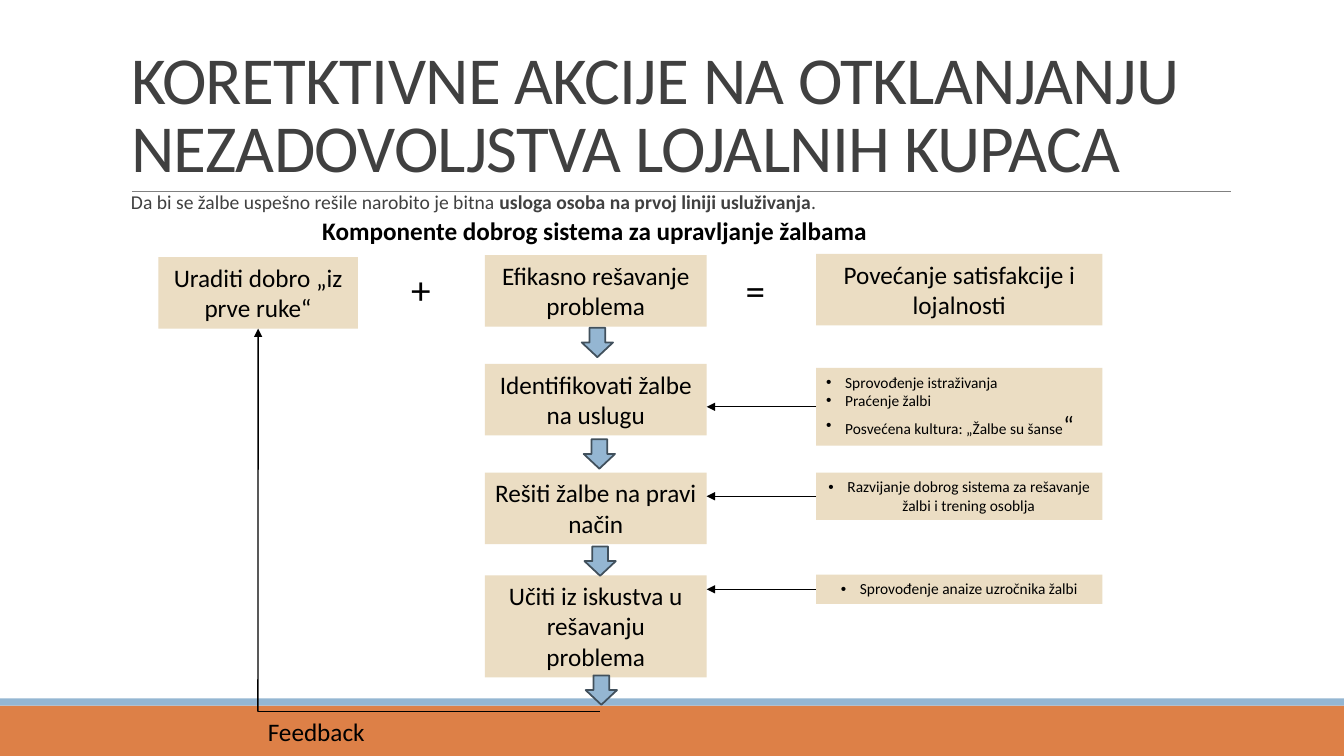
from lxml import etree
from pptx import Presentation
from pptx.dml.color import RGBColor
from pptx.enum import shapes as kinds, text as styles
from pptx.oxml.ns import qn
from pptx.util import Cm, Pt

ORANGE = RGBColor(0xDD, 0x80, 0x47)
BLUE = RGBColor(0x94, 0xB6, 0xD2)
DARK_BLUE = RGBColor(0x41, 0x50, 0x5C)
SAND = RGBColor(0xEB, 0xDD, 0xC3)
GREY = RGBColor(0x80, 0x80, 0x80)
DARK_GREY = RGBColor(0x40, 0x40, 0x40)
BLACK = RGBColor(0, 0, 0)
LEFT, CENTER = styles.PP_ALIGN.LEFT, styles.PP_ALIGN.CENTER

# Text is a list of paragraphs, each a list of (words, run format). Lengths are in cm.
TITLE = [[("KORETKTIVNE AKCIJE NA OTKLANJANJU NEZADOVOLJSTVA LOJALNIH KUPACA", {})]]
INTRO = [[("Da bi se žalbe uspešno rešile narobito je bitna ", {}),
          ("usloga osoba na prvoj liniji usluživanja", {"bold": True}),
          (".", {})]]
WIDTH, HEIGHT = 33.87, 19.05
STEP_LEFT, STEP_WIDTH = 12.22, 5.59
RIGHT_LEFT, RIGHT_WIDTH = 20.57, 7.21
BOX_HEIGHT = 1.8
BOXES = [  # words, left, top, width, height
    ("Uraditi dobro „iz prve ruke“", 3.99, 6.48, 5.03, BOX_HEIGHT),
    ("Efikasno rešavanje problema", STEP_LEFT, 6.43, STEP_WIDTH, BOX_HEIGHT),
    ("Povećanje satisfakcije i lojalnosti", RIGHT_LEFT, 6.4, RIGHT_WIDTH, BOX_HEIGHT),
    ("Identifikovati žalbe na uslugu", STEP_LEFT, 9.17, STEP_WIDTH, BOX_HEIGHT),
    ("Rešiti žalbe na pravi način", STEP_LEFT, 11.91, STEP_WIDTH, BOX_HEIGHT),
    ("Učiti iz iskustva u rešavanju problema", STEP_LEFT, 14.5, STEP_WIDTH, 2.57),
]
NOTES = [  # paragraphs, top, height, alignment
    ([[("Sprovođenje istraživanja", {})],
      [("Praćenje žalbi", {})],
      [("Posvećena kultura: „Žalbe su šanse", {}), ("“", {"size": 18})]], 9.27, 1.96, LEFT),
    ([[("Razvijanje dobrog sistema za rešavanje žalbi i trening osoblja", {})]],
     11.91, 1.19, CENTER),
    ([[("Sprovođenje anaize uzročnika žalbi", {})]], 14.48, 0.74, CENTER),
]
DOWN_ARROWS = [(14.66, 8.26), (14.71, 11.07), (14.73, 13.77), (14.76, 17.02)]
LABELS = [  # words, left, top, width, height, format
    ("+", 10.11, 6.55, 1.27, 1.45, {"size": 28}),
    ("=", 18.54, 6.58, 1.27, 1.45, {"size": 28}),
    ("Feedback", 6.5, 17.93, 2.95, 1.02, {}),
    ("Komponente dobrog sistema za upravljanje žalbama", 7.87, 5.31, 14.25, 1.02,
     {"bold": True}),
]
FEEDBACK_X, FEEDBACK_Y, FEEDBACK_END = 6.5, 17.93, 15.11


def write(shape, paragraphs, size=18, color=BLACK, bold=False, align=LEFT, anchor="TOP",
          bullet=None, margin=0, hanging=0, line=None, before=0, after=0, tracking=None,
          fit="SHAPE_TO_FIT_TEXT"):
    frame = shape.text_frame
    frame.word_wrap = True
    frame.auto_size = styles.MSO_AUTO_SIZE[fit]
    frame.vertical_anchor = styles.MSO_ANCHOR[anchor]
    for index, runs in enumerate(paragraphs):
        paragraph = frame.add_paragraph() if index else frame.paragraphs[0]
        paragraph.alignment = align
        paragraph.space_before, paragraph.space_after = Pt(before), Pt(after)
        if line:
            paragraph.line_spacing = line
        properties = paragraph._p.get_or_add_pPr()
        properties.set("marL", str(Cm(margin)))
        properties.set("indent", str(-Cm(hanging)))
        if bullet:
            etree.SubElement(properties, qn("a:buFont"), typeface="Arial")
            etree.SubElement(properties, qn("a:buChar"), char=bullet)
        else:
            etree.SubElement(properties, qn("a:buNone"))
        for words, changes in runs:
            run = paragraph.add_run()
            run.text = words
            run.font.name = "Calibri"
            run.font.size = Pt(changes.get("size", size))
            run.font.bold = changes.get("bold", bold)
            run.font.color.rgb = color
            if tracking:
                run._r.get_or_add_rPr().set("spc", str(tracking))


def place(shape, left, top, width, height):
    shape.left, shape.top = Cm(left), Cm(top)
    shape.width, shape.height = Cm(width), Cm(height)


def add_filled(slide, left, top, width, height, fill, kind="RECTANGLE", outline=None):
    shape = slide.shapes.add_shape(kinds.MSO_SHAPE[kind], Cm(left), Cm(top),
                                   Cm(width), Cm(height))
    shape.shadow.inherit = False
    shape.fill.solid()
    shape.fill.fore_color.rgb = fill
    if outline:
        shape.line.color.rgb = outline
        shape.line.width = Pt(1.25)
    else:
        shape.line.fill.background()
    return shape


def add_line(slide, start, end, color=BLACK, width=1, arrow=False):
    line = slide.shapes.add_connector(kinds.MSO_CONNECTOR.STRAIGHT,
                                      *(Cm(value) for value in start + end))
    line.line.color.rgb = color
    line.line.width = Pt(width)
    if arrow:
        etree.SubElement(line.line._get_or_add_ln(), qn("a:tailEnd"), type="triangle")
    etree.SubElement(line._element.spPr, qn("a:effectLst"))
    return line


def main():
    presentation = Presentation()
    presentation.slide_width, presentation.slide_height = Cm(WIDTH), Cm(HEIGHT)
    slide = presentation.slides.add_slide(presentation.slide_layouts[1])

    add_filled(slide, 0, 17.78, WIDTH, 1.27, ORANGE)
    add_filled(slide, 0, 17.6, WIDTH, 0.18, BLUE)
    add_line(slide, (3.33, 4.83), (31.01, 4.83), GREY, 0.5)

    title, intro = slide.placeholders
    place(title, 3.05, 0.79, 27.94, 4.04)
    write(title, TITLE, size=48, color=DARK_GREY, anchor="BOTTOM", line=0.85,
          tracking=-50, fit="NONE")
    place(intro, 3.05, 4.83, 27.94, 0.76)
    intro.text_frame.margin_left = intro.text_frame.margin_right = 0
    write(intro, INTRO, size=14, color=DARK_GREY, bullet=" ", margin=0.25, hanging=0.25,
          line=0.7, before=12, after=2, fit="NONE")

    boxes = []
    for words, *area in BOXES:
        box = add_filled(slide, *area, SAND)
        write(box, [[(words, {})]], align=CENTER)
        boxes.append(box)

    for paragraphs, top, height, align in NOTES:
        note = add_filled(slide, RIGHT_LEFT, top, RIGHT_WIDTH, height, SAND)
        write(note, paragraphs, size=11, align=align, bullet="•", margin=0.48, hanging=0.48)
        middle = top + height / 2
        arrow = add_line(slide, (RIGHT_LEFT, middle), (STEP_LEFT + STEP_WIDTH, middle),
                         arrow=True)
        arrow.begin_connect(note, 1)

    for left, top in DOWN_ARROWS:
        add_filled(slide, left, top, 0.79, 0.74, BLUE, "DOWN_ARROW", DARK_BLUE)

    first_box = boxes[0]
    feedback = add_line(slide, (FEEDBACK_X, FEEDBACK_Y), (FEEDBACK_X, 8.28), arrow=True)
    feedback.end_connect(first_box, 2)
    add_line(slide, (FEEDBACK_X, FEEDBACK_Y), (FEEDBACK_END, FEEDBACK_Y))

    for words, left, top, width, height, look in LABELS:
        label = slide.shapes.add_textbox(Cm(left), Cm(top), Cm(width), Cm(height))
        write(label, [[(words, {})]], **look)

    presentation.save("out.pptx")


if __name__ == "__main__":
    main()
